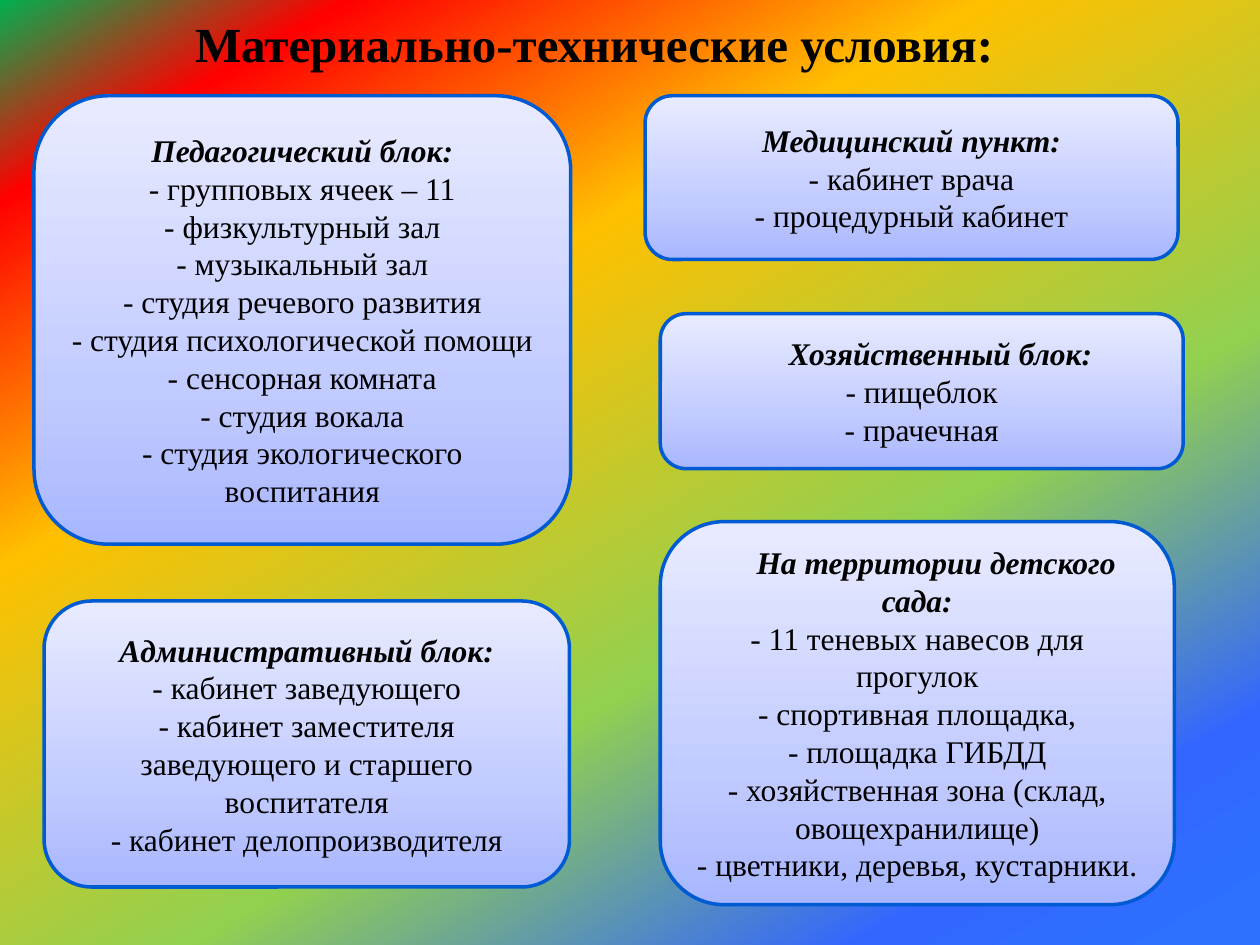
from dataclasses import dataclass

import pptx
import pptx.dml.color
import pptx.dml.fill
import pptx.enum.shapes
import pptx.enum.text
import pptx.oxml
import pptx.oxml.ns
import pptx.slide
import pptx.text.text
import pptx.util
from lxml import etree

FONT = "Times New Roman"
INK = "000000"
BORDER = "005BD3"
RAINBOW = [(0, "00B050"), (12, "FF0000"), (34, "FFC000"),
           (63, "92D050"), (86, "3366FF"), (98, "2C71FF")]
LAVENDER = [(0, "A8B6FF"), (35, "C2CBFF"), (100, "E8EBFF")]
HEADING = {"size": pptx.util.Pt(18), "name": FONT, "bold": True, "italic": True}
ITEM = HEADING | {"bold": False, "italic": False}
TITLE = HEADING | {"size": pptx.util.Pt(28), "italic": False}


@dataclass
class Block:
    left: float
    top: float
    width: float
    height: float
    heading: str
    items: list[str]
    heading_indent: float = 0


BLOCKS = [
    Block(0.27, 0.76, 4.26, 3.56, "Педагогический блок:", [
        "групповых ячеек – 11",
        "физкультурный зал",
        "музыкальный зал",
        "студия речевого развития",
        "студия психологической помощи",
        "сенсорная комната",
        "студия вокала",
        "студия экологического воспитания",
    ]),
    Block(5.12, 0.76, 4.23, 1.3, "Медицинский пункт:", [
        "кабинет врача",
        "процедурный кабинет",
    ]),
    Block(5.24, 4.14, 4.08, 3.04, "На территории детского сада:", [
        "11 теневых навесов для прогулок",
        "спортивная площадка,",
        "площадка ГИБДД",
        "хозяйственная зона (склад, овощехранилище)",
        "цветники, деревья, кустарники.",
    ], 0.3),
    Block(5.24, 2.49, 4.15, 1.23, "Хозяйственный блок:", [
        "пищеблок",
        "прачечная",
    ], 0.3),
    Block(0.35, 4.77, 4.17, 2.27, "Административный блок:", [
        "кабинет заведующего",
        "кабинет заместителя заведующего и старшего воспитателя",
        "кабинет делопроизводителя",
    ]),
]


def color(value: str) -> pptx.dml.color.RGBColor:
    return pptx.dml.color.RGBColor.from_string(value)


def set_gradient(fill: pptx.dml.fill.FillFormat, owner: etree.ElementBase,
                 stops: list[tuple[int, str]], clockwise: int) -> None:
    qn = pptx.oxml.ns.qn
    fill.gradient()
    fill.gradient_angle = 360 - clockwise
    stop_list = owner.find(".//" + qn("a:gsLst"))
    for old_stop in list(stop_list):
        stop_list.remove(old_stop)
    for percent, value in stops:
        stop = etree.SubElement(stop_list, qn("a:gs"), pos=str(percent * 1000))
        etree.SubElement(stop, qn("a:srgbClr"), val=value)


def write(paragraph: pptx.text.text._Paragraph, text: str, style: dict) -> None:
    paragraph.alignment = pptx.enum.text.PP_ALIGN.CENTER
    run = paragraph.add_run()
    run.text = text
    for attribute, value in style.items():
        setattr(run.font, attribute, value)
    run.font.color.rgb = color(INK)


def place(shape, left: float, top: float, width: float, height: float) -> None:
    for side, length in zip(("left", "top", "width", "height"),
                            (left, top, width, height)):
        setattr(shape, side, pptx.util.Inches(length))


def draw_block(slide: pptx.slide.Slide, block: Block) -> None:
    panel = slide.shapes.add_shape(
        pptx.enum.shapes.MSO_SHAPE.ROUNDED_RECTANGLE, 0, 0, 0, 0)
    place(panel, block.left, block.top, block.width, block.height)
    panel.shadow.inherit = False
    set_gradient(panel.fill, panel._element, LAVENDER, 270)
    panel.line.color.rgb = color(BORDER)
    panel.line.width = pptx.util.Pt(2)
    frame = panel.text_frame
    frame.word_wrap = True
    frame.vertical_anchor = pptx.enum.text.MSO_ANCHOR.MIDDLE
    heading = frame.paragraphs[0]
    write(heading, block.heading, HEADING)
    if block.heading_indent:
        indent = pptx.util.Inches(block.heading_indent)
        heading._p.get_or_add_pPr().set("indent", str(indent))
    for item in block.items:
        write(frame.add_paragraph(), f"- {item}", ITEM)


def main() -> None:
    deck = pptx.Presentation()
    deck.slide_width = pptx.util.Inches(10)
    deck.slide_height = pptx.util.Inches(7.5)
    slide = deck.slides.add_slide(deck.slide_layouts[5])
    set_gradient(slide.background.fill, slide._element, RAINBOW, 60)

    title = slide.shapes.title
    place(title, 0.45, 0.06, 8.53, 0.65)
    title.text_frame.word_wrap = True
    title.text_frame.vertical_anchor = pptx.enum.text.MSO_ANCHOR.TOP
    write(title.text_frame.paragraphs[0], "Материально-технические условия:", TITLE)

    for block in BLOCKS:
        draw_block(slide, block)
    deck.save("out.pptx")


if __name__ == "__main__":
    main()
